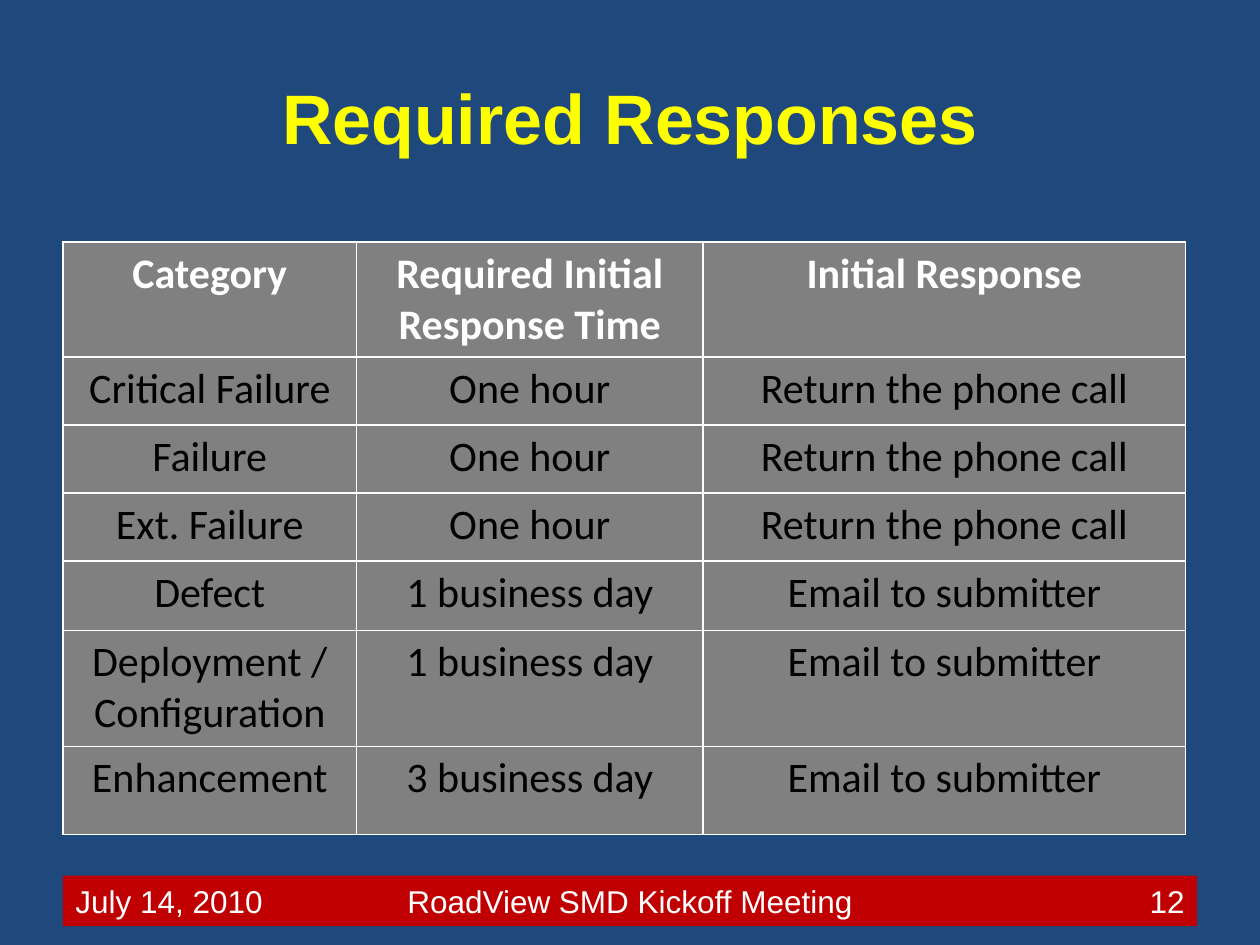
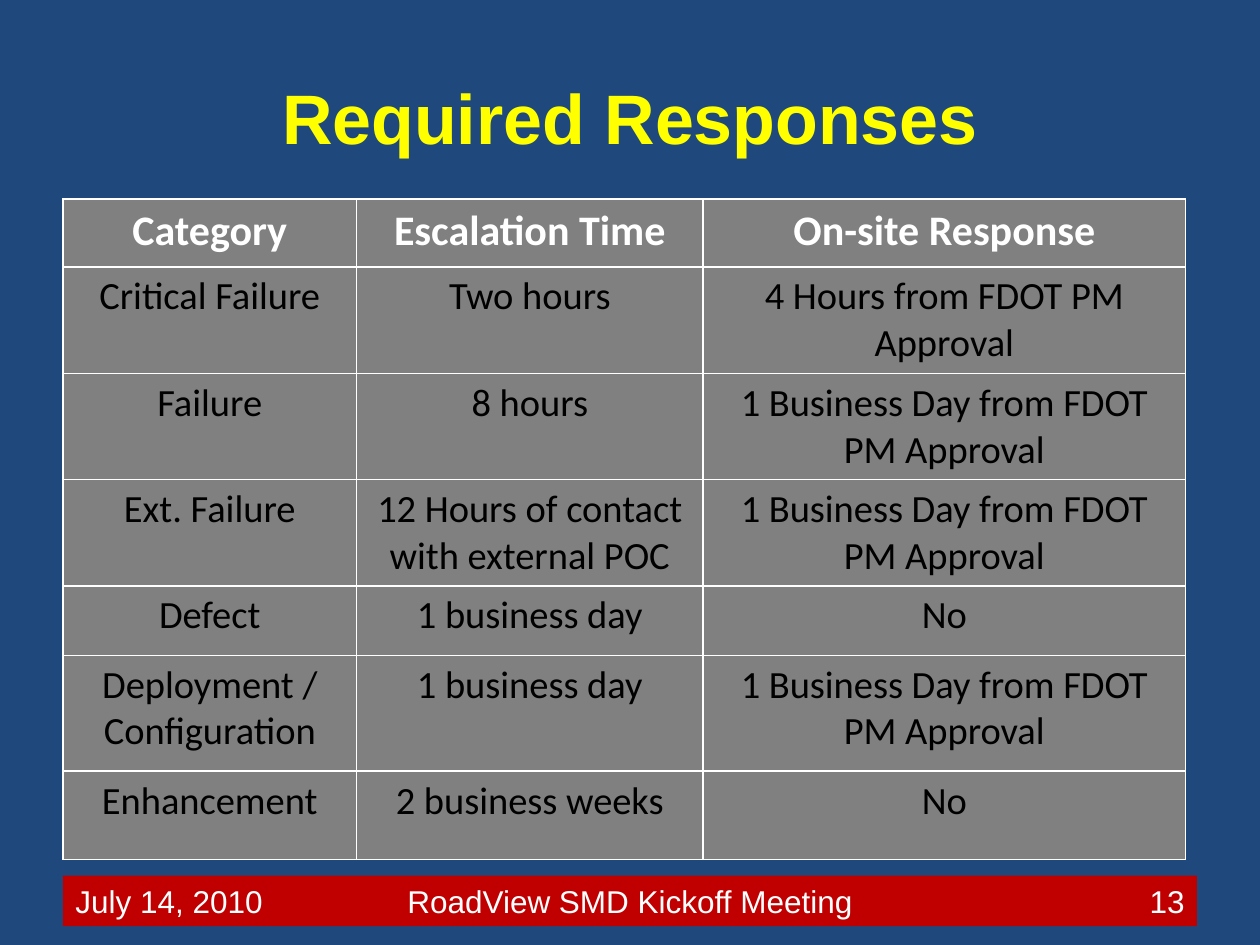
from lxml.etree import SubElement
from pptx import Presentation
from pptx.dml.color import RGBColor
from pptx.enum.shapes import MSO_SHAPE
from pptx.enum.text import MSO_ANCHOR, PP_ALIGN as ALIGN
from pptx.oxml.ns import qn
from pptx.util import Inches, Pt

NAVY = RGBColor(0x1F, 0x49, 0x7D)
RED = RGBColor(0xC0, 0x00, 0x00)
YELLOW = RGBColor(0xFF, 0xFF, 0x00)
GRAY = RGBColor(0x80, 0x80, 0x80)
WHITE = RGBColor(0xFF, 0xFF, 0xFF)
BLACK = RGBColor(0x00, 0x00, 0x00)

MARGIN = 0.5
COLUMN_WIDTHS = [2.33, 2.75, 3.83]
ROW_HEIGHTS = [0.54] * 4 + [0.55, 0.92, 0.7]
FOOTER_TOP, FOOTER_HEIGHT = 6.95, 0.4
TITLE = "Required Responses"
FIRST_NUMBER = 12

CATEGORIES = ["Category", "Critical Failure", "Failure", "Ext. Failure",
              "Defect", "Deployment / Configuration", "Enhancement"]
ONE_DAY_ON_SITE = "1 Business Day from FDOT PM Approval"

# table top, body text size, second column, third column
RESPONSES = [
    (1.92, 24,
     ["Required Initial Response Time"] + ["One hour"] * 3
     + ["1 business day"] * 2 + ["3 business day"],
     ["Initial Response"] + ["Return the phone call"] * 3
     + ["Email to submitter"] * 3),
    (1.58, 22,
     ["Escalation Time", "Two hours", "8 hours",
      "12 Hours of contact with external POC",
      "1 business day", "1 business day", "2 business weeks"],
     ["On-site Response", "4 Hours from FDOT PM Approval",
      ONE_DAY_ON_SITE, ONE_DAY_ON_SITE, "No", ONE_DAY_ON_SITE, "No"]),
]


def write(frame, text, size, color, font="Arial", bold=False, align=ALIGN.CENTER):
    frame.word_wrap = True
    paragraph = frame.paragraphs[0]
    paragraph.alignment = align
    run = paragraph.add_run()
    run.text = text
    run.font.name = font
    run.font.size = Pt(size)
    run.font.bold = bold
    run.font.color.rgb = color


def outline(cell, color, width):
    properties = cell._tc.get_or_add_tcPr()
    for side in ("lnL", "lnR", "lnT", "lnB"):
        line = SubElement(properties, qn(f"a:{side}"), w=str(Pt(width)))
        fill = SubElement(line, qn("a:solidFill"))
        SubElement(fill, qn("a:srgbClr"), val=str(color))


deck = Presentation()
deck.slide_width, deck.slide_height = Inches(10), Inches(7.5)
deck.slide_master.background.fill.solid()
deck.slide_master.background.fill.fore_color.rgb = NAVY
title_only = deck.slide_layouts[5]

for number, (top, body_size, times, actions) in enumerate(RESPONSES, FIRST_NUMBER):
    slide = deck.slides.add_slide(title_only)

    heading = slide.shapes.title
    heading.left, heading.top = Inches(MARGIN), Inches(0.3)
    heading.width, heading.height = Inches(9), Inches(1.25)
    heading.text_frame.vertical_anchor = MSO_ANCHOR.MIDDLE
    write(heading.text_frame, TITLE, 40, YELLOW, bold=True)

    left = MARGIN
    for label, width, align in [("July 14, 2010", 2, ALIGN.LEFT),
                                ("RoadView SMD Kickoff Meeting", 5, ALIGN.CENTER),
                                (str(number), 2, ALIGN.RIGHT)]:
        band = slide.shapes.add_shape(MSO_SHAPE.RECTANGLE, Inches(left), Inches(FOOTER_TOP),
                                      Inches(width), Inches(FOOTER_HEIGHT))
        band.shadow.inherit = False
        band.fill.solid()
        band.fill.fore_color.rgb = RED
        band.line.fill.background()
        band.text_frame.vertical_anchor = MSO_ANCHOR.MIDDLE
        write(band.text_frame, label, 18, WHITE, align=align)
        left += width

    responses = slide.shapes.add_table(
        len(ROW_HEIGHTS), len(COLUMN_WIDTHS), Inches(MARGIN), Inches(top),
        Inches(sum(COLUMN_WIDTHS)), Inches(sum(ROW_HEIGHTS))).table
    for column, width in zip(responses.columns, COLUMN_WIDTHS):
        column.width = Inches(width)
    for row, height in zip(responses.rows, ROW_HEIGHTS):
        row.height = Inches(height)

    for r, entries in enumerate(zip(CATEGORIES, times, actions)):
        is_header = r == 0
        for c, entry in enumerate(entries):
            cell = responses.cell(r, c)
            outline(cell, WHITE, 1)
            cell.fill.solid()
            cell.fill.fore_color.rgb = GRAY
            write(cell.text_frame, entry, 24 if is_header else body_size,
                  WHITE if is_header else BLACK, font="Calibri", bold=is_header)

deck.save("out.pptx")
